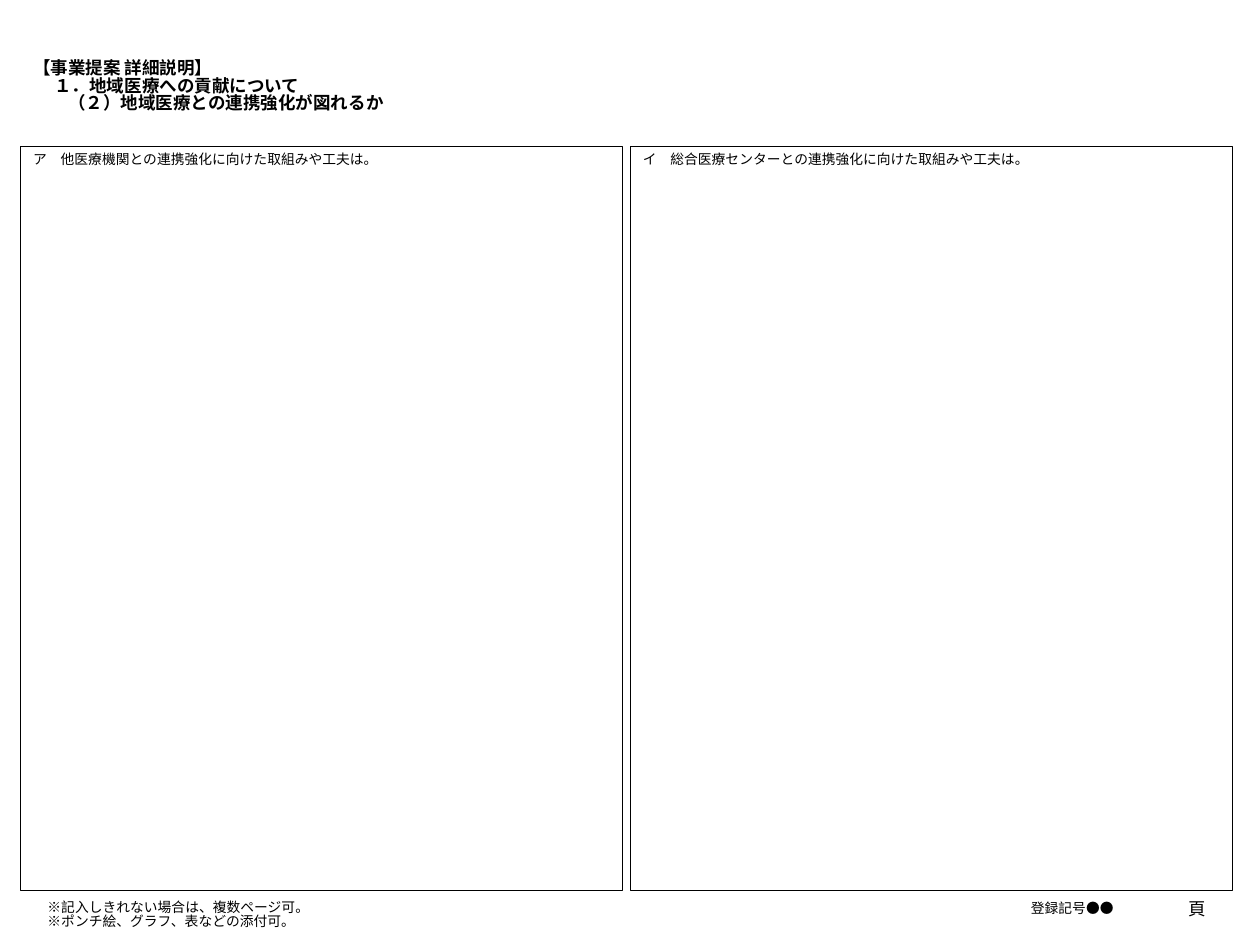
import pptx
import pptx.util
import pptx.dml.color
import pptx.enum.shapes
import pptx.enum.text
import pptx.oxml

Pt = pptx.util.Pt
ALIGN = pptx.enum.text.PP_ALIGN
ANCHOR = pptx.enum.text.MSO_ANCHOR
FONT = "Noto Sans CJK JP"
INK = "000000"


def colour(value):
    return pptx.dml.color.RGBColor.from_string(value)


def write(shape, text, size=11, bold=False, align=ALIGN.LEFT,
          anchor=ANCHOR.MIDDLE, spacing=None, indents=()):
    """Write one paragraph per line of text, with optional left indents."""
    frame = shape.text_frame
    frame.text = text
    frame.word_wrap = True
    frame.auto_size = pptx.enum.text.MSO_AUTO_SIZE.NONE
    frame.vertical_anchor = anchor
    frame.margin_left = frame.margin_right = Pt(10)
    frame.margin_top = frame.margin_bottom = Pt(5)
    for index, paragraph in enumerate(frame.paragraphs):
        paragraph.alignment = align
        paragraph.space_before = Pt(0)
        if spacing:
            paragraph.line_spacing = spacing
        if indents:
            properties = paragraph._p.get_or_add_pPr()
            properties.set("marL", str(Pt(indents[index])))
            properties.set("indent", "0")
        for run in paragraph.runs:
            run.font.size = Pt(size)
            run.font.bold = bold
            run.font.color.rgb = colour(INK)
            run.font.name = FONT
            east_asian = pptx.oxml.xmlchemy.OxmlElement("a:ea")
            east_asian.set("typeface", FONT)
            run.font._element.append(east_asian)


def place_heading(slide, left, top, width, height):
    heading = slide.shapes.title
    heading.left, heading.top = Pt(left), Pt(top)
    heading.width, heading.height = Pt(width), Pt(height)
    lines = ["【事業提案 詳細説明】",
             "１．地域医療への貢献について",
             "（２）地域医療との連携強化が図れるか"]
    write(heading, "\n".join(lines), size=14, bold=True, anchor=ANCHOR.TOP,
          spacing=0.83, indents=(0, 17, 28))


def place_answers(slide, left, top, width, height, gap=6):
    questions = ["ア　他医療機関との連携強化に向けた取組みや工夫は。",
                 "イ　総合医療センターとの連携強化に向けた取組みや工夫は。"]
    answer_width = (width - gap) / 2
    for index, question in enumerate(questions):
        answer = slide.shapes.add_shape(
            pptx.enum.shapes.MSO_SHAPE.RECTANGLE,
            Pt(left + index * (answer_width + gap)), Pt(top),
            Pt(answer_width), Pt(height))
        answer.shadow.inherit = False
        answer.fill.background()
        answer.line.color.rgb = colour(INK)
        answer.line.width = Pt(0.75)
        write(answer, question, anchor=ANCHOR.TOP, spacing=0.83)


def place_footer(slide, left, top, width, height):
    right = left + width
    notes = "※記入しきれない場合は、複数ページ可。\n※ポンチ絵、グラフ、表などの添付可。"
    # text, left, top, width, format
    entries = [
        ("登録記号●●", right - 393, top, 319, {"align": ALIGN.RIGHT}),
        (notes, left, top + 6, 499, {"spacing": 0.8}),
        ("頁", right - 57, top, 57, {"size": 14, "align": ALIGN.RIGHT}),
    ]
    for text, x, y, entry_width, text_format in entries:
        entry = slide.shapes.add_textbox(
            Pt(x), Pt(y), Pt(entry_width), Pt(height))
        write(entry, text, **text_format)


def main():
    deck = pptx.Presentation()
    deck.slide_width, deck.slide_height = Pt(1008), Pt(756)
    slide = deck.slides.add_slide(deck.slide_layouts.get_by_name("Title Only"))

    # Heading, two answer boxes, footer
    place_heading(slide, 16.5, 43.5, 964, 79)
    place_answers(slide, 16.5, 117.5, 969.5, 595)
    place_footer(slide, 28, 706.5, 947, 40)

    deck.save("out.pptx")


if __name__ == "__main__":
    main()
